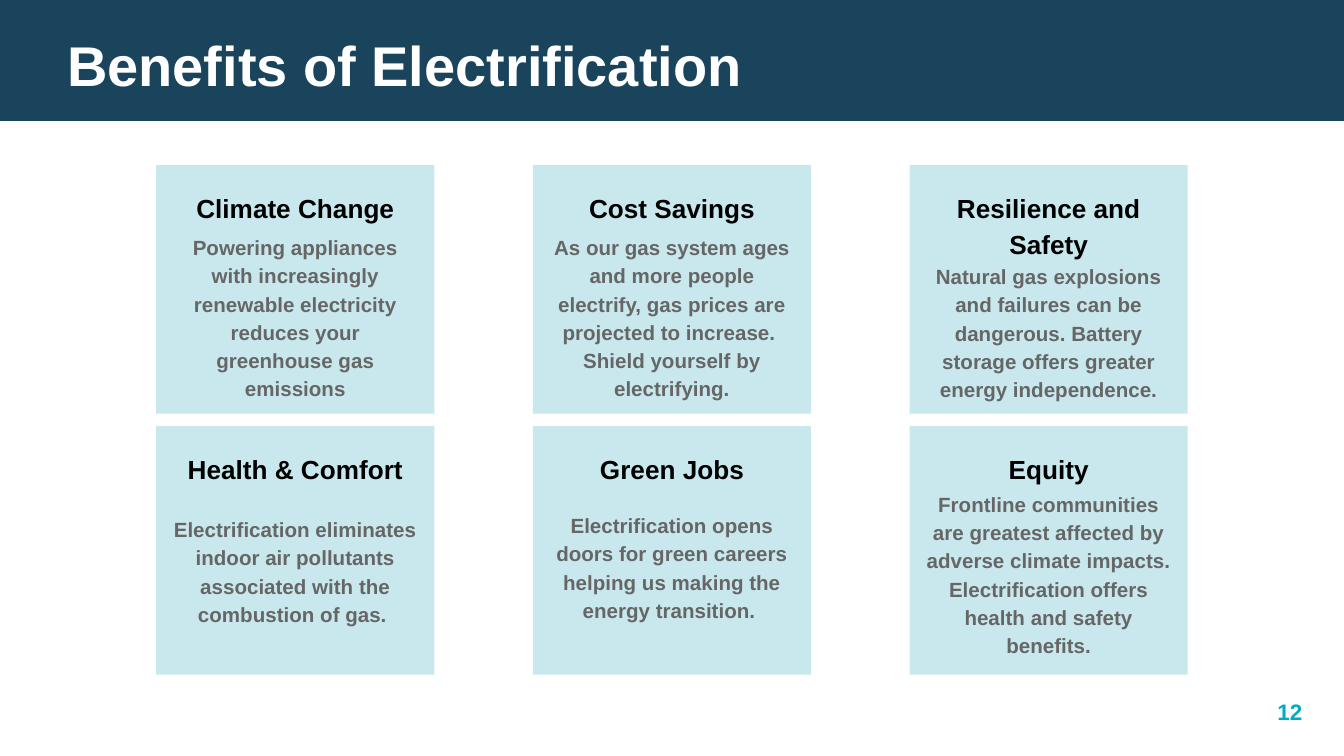
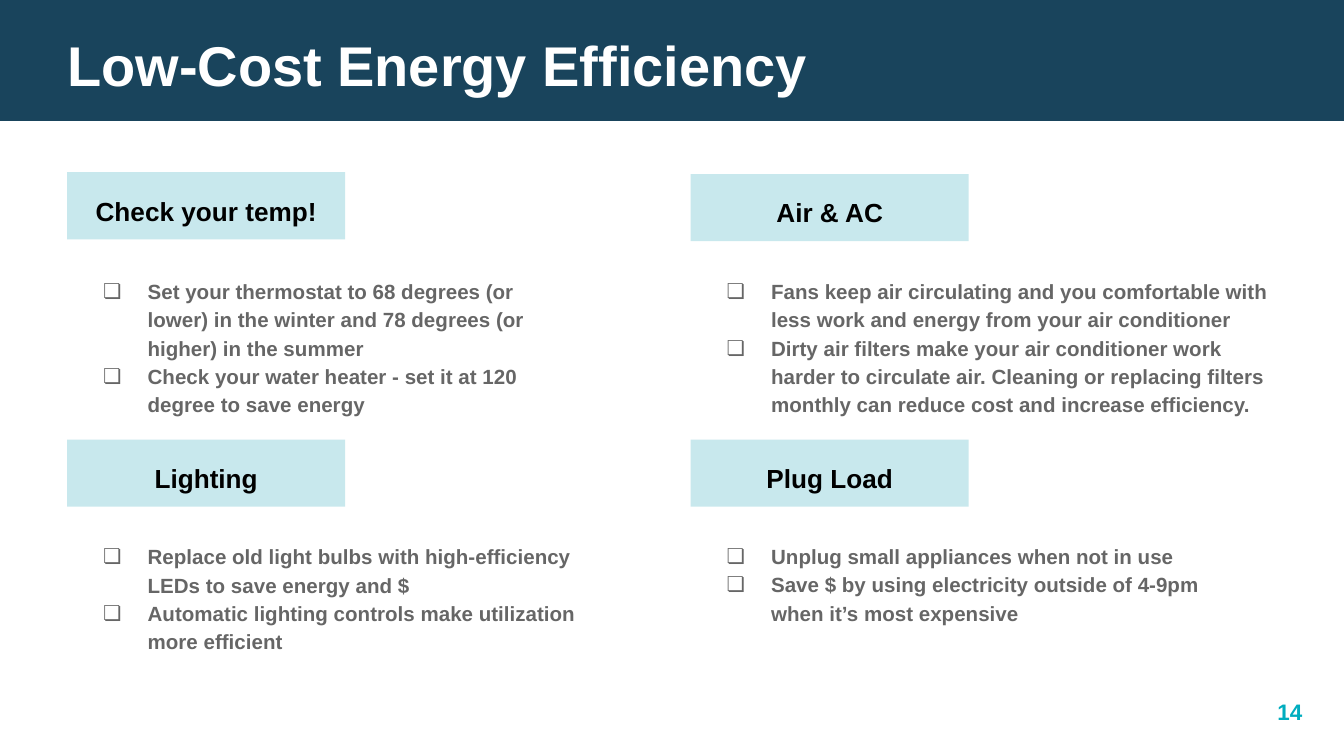
from lxml import etree
from pptx import Presentation
from pptx import util as u
from pptx.dml import color
from pptx.enum import shapes, text
from pptx.oxml import ns

FACE = "Arial"
NAVY, PALE, TEAL = "19445C", "C8E8ED", "00ADBF"
WHITE, BLACK, GRAY = "FFFFFF", "000000", "666666"
LEFT, MID, RIGHT = text.PP_ALIGN.LEFT, text.PP_ALIGN.CENTER, text.PP_ALIGN.RIGHT
CARD_W, CARD_H, TAG_H = 149, 133.2, 36

CARDS = [
    [("Climate Change", 31.5, 116.7, 89.3,
      ["Powering appliances with increasingly renewable electricity "
       "reduces your greenhouse gas emissions"]),
     ("Cost Savings", 31.5, 116.7, 104.4,
      ["As our gas system ages and more people electrify, gas prices "
       "are projected to increase. ",
       "Shield yourself by electrifying."]),
     ("Resilience and Safety", 51, 132.3, 89.3,
      ["Natural gas explosions and failures can be dangerous. Battery "
       "storage offers greater energy independence."])],
    [("Health & Comfort", 31.5, 267.8, 74,
      ["Electrification eliminates indoor air pollutants associated "
       "with the combustion of gas. "]),
     ("Green Jobs", 31.5, 265.7, 74,
      ["Electrification opens doors for green careers helping us "
       "making the energy transition. "]),
     ("Equity", 31.5, 254.3, 104.4,
      ["Frontline communities are greatest affected by adverse climate "
       "impacts. Electrification offers health and safety benefits."])],
]

TIPS = [
    ("Check your temp!", 36, 92.3, 140.4, 253.5, 89.3,
     ["Set your thermostat to 68 degrees (or lower) in the winter and "
      "78 degrees (or higher) in the summer",
      "Check your water heater - set it at 120 degree to save energy"]),
    ("Air & AC", 370, 93.3, 140.4, 327.6, 89.3,
     ["Fans keep air circulating and you comfortable with less work and "
      "energy from your air conditioner",
      "Dirty air filters make your air conditioner work harder to "
      "circulate air. Cleaning or replacing filters monthly can reduce "
      "cost and increase efficiency."]),
    ("Lighting", 36, 235.5, 282.4, 301, 74,
     ["Replace old light bulbs with high-efficiency LEDs to save energy "
      "and $",
      "Automatic lighting controls make utilization more efficient"]),
    ("Plug Load", 370, 235.5, 282.4, 301, 58.5,
     ["Unplug small appliances when not in use",
      "Save $ by using electricity outside of 4-9pm when it’s most "
      "expensive"]),
]


def tint(part, hue):
    """Give a fill or font one solid colour from a hex string."""
    if hasattr(part, "solid"):
        part.solid()
        part.fore_color.rgb = color.RGBColor.from_string(hue)
    else:
        part.color.rgb = color.RGBColor.from_string(hue)


def place(*lens):
    """Turn numbers into point lengths."""
    return [u.Pt(n) for n in lens]


def block(slide, x, y, w, h, hue):
    """Draw a plain filled rectangle."""
    rect = slide.shapes.add_shape(shapes.MSO_SHAPE.RECTANGLE, *place(x, y, w, h))
    rect.shadow.inherit = False
    tint(rect.fill, hue)
    rect.line.fill.background()


def mark(para):
    """Hang a grey box bullet on a paragraph."""
    props = para._p.get_or_add_pPr()
    props.set("marL", str(u.Pt(36)))
    props.set("indent", str(-u.Pt(23.8)))
    tone = etree.SubElement(props, ns.qn("a:buClr"))
    etree.SubElement(tone, ns.qn("a:srgbClr")).set("val", GRAY)
    etree.SubElement(props, ns.qn("a:buFont")).set("typeface", FACE)
    etree.SubElement(props, ns.qn("a:buChar")).set("char", "❏")


def write(slide, x, y, w, h, lines, size, hue, align=MID, pad=7.2,
          space=1.15, grow=True, list_on=False):
    """Add a bold text box with one paragraph per line."""
    frame = slide.shapes.add_textbox(*place(x, y, w, h)).text_frame
    frame.word_wrap = True
    frame.margin_left = frame.margin_right = u.Pt(pad)
    frame.margin_top = frame.margin_bottom = u.Pt(pad)
    if grow:
        frame.auto_size = text.MSO_AUTO_SIZE.SHAPE_TO_FIT_TEXT
    if not pad:
        frame.vertical_anchor = text.MSO_ANCHOR.MIDDLE
    for i, line in enumerate(lines):
        para = frame.add_paragraph() if i else frame.paragraphs[0]
        if list_on:
            mark(para)
        para.alignment = align
        para.line_spacing = space
        run = para.add_run()
        run.text = line
        run.font.name, run.font.size, run.font.bold = FACE, u.Pt(size), True
        tint(run.font, hue)


def start(deck, title, page):
    """Add a slide with its band, title and page number."""
    slide = deck.slides.add_slide(deck.slide_layouts[6])
    tint(slide.background.fill, WHITE)
    block(slide, 0, 0, 720, 64.8, NAVY)
    write(slide, 36, 13, 648, 42.5, [title], 30, WHITE, LEFT, 0, 1.0, False)
    write(slide, 683.3, 373.8, 14.4, 14.4, [page], 12, TEAL, RIGHT, 0, 1.0)
    return slide


def label(slide, x, y, h, head):
    """Write a heading centred on a panel."""
    write(slide, x + 6.8, y, CARD_W - 13.6, h, [head], 14, BLACK)


def grid(slide):
    """Lay out the benefit cards in rows and columns."""
    for r, row in enumerate(CARDS):
        for c, (head, head_h, top, high, lines) in enumerate(row):
            x, y = 83.7 + 201.8 * c, 88.4 + 139.9 * r
            block(slide, x, y, CARD_W, CARD_H, PALE)
            label(slide, x, y + 4.8, head_h, head)
            write(slide, x, top, CARD_W, high, lines, 11, GRAY)


def tips(slide):
    """Lay out the tagged lists of tips."""
    for head, x, y, top, wide, high, lines in TIPS:
        block(slide, x, y, CARD_W, TAG_H, PALE)
        label(slide, x, y + 2.4, 31.5, head)
        write(slide, x, top, wide, high, lines, 11, GRAY, LEFT, list_on=True)


def main():
    """Build and save the deck."""
    deck = Presentation()
    deck.slide_width, deck.slide_height = place(720, 405)
    grid(start(deck, "Benefits of Electrification", "12"))
    tips(start(deck, "Low-Cost Energy Efficiency", "14"))
    deck.save("out.pptx")


if __name__ == "__main__":
    main()
